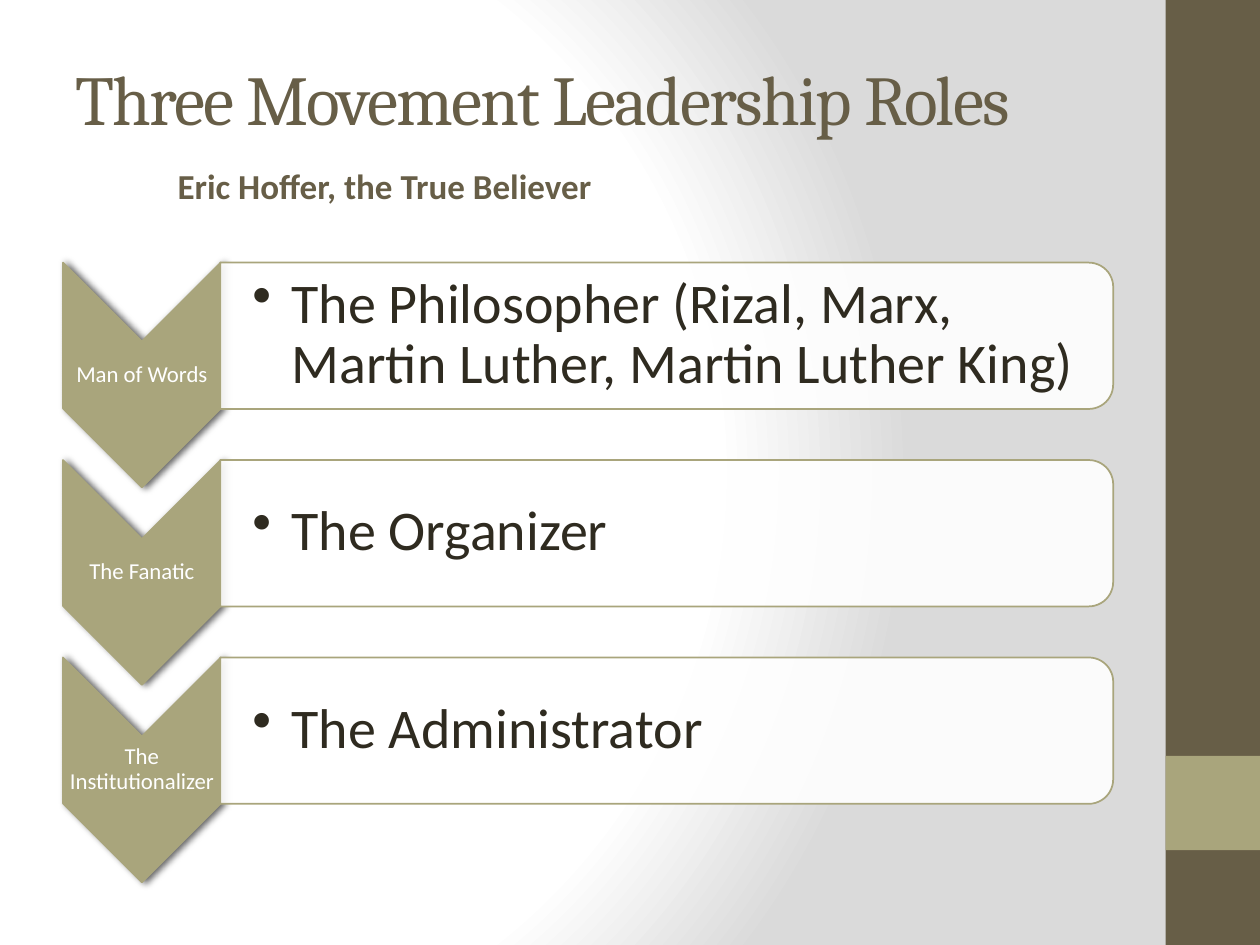
from lxml import etree
from pptx import Presentation
from pptx.dml.color import RGBColor
from pptx.enum.shapes import MSO_SHAPE
from pptx.enum.text import MSO_ANCHOR, PP_ALIGN
from pptx.oxml import parse_xml
from pptx.oxml.ns import nsdecls, qn
from pptx.util import Cm, Pt

COLORS = {
    "brown": "675E47",
    "olive": "A9A57C",
    "ink": "2F2B20",
    "white": "FFFFFF",
    "grey": "DADADA",
}
ROLES = [
    ("Man of Words", "The Philosopher (Rizal, Marx, Martin Luther, Martin Luther King)"),
    ("The Fanatic", "The Organizer"),
    ("The Institutionalizer", "The Administrator"),
]
ROW_PITCH = 3.98


def add_filled(preset, center_x, center_y, width, height, color, rotation=0):
    """Add a plain filled shape, placed by its centre in centimetres."""
    shape = slide.shapes.add_shape(
        preset, Cm(center_x - width / 2), Cm(center_y - height / 2), Cm(width), Cm(height)
    )
    shape.rotation = rotation
    shape.shadow.inherit = False
    shape.fill.solid()
    shape.fill.fore_color.rgb = RGBColor.from_string(COLORS[color])
    shape.line.fill.background()
    return shape


def add_text(text, left, top, width, height, font, size, color, anchor, insets=(0.25, 0.13)):
    """Add a one-paragraph box; insets are the left one and that of the other sides."""
    box = slide.shapes.add_textbox(Cm(left), Cm(top), Cm(width), Cm(height))
    frame = box.text_frame
    frame.word_wrap = True
    frame.vertical_anchor = anchor
    frame.margin_left = Cm(insets[0])
    frame.margin_top = frame.margin_right = frame.margin_bottom = Cm(insets[1])
    paragraph = frame.paragraphs[0]
    run = paragraph.add_run()
    run.text = text
    run.font.name = font
    run.font.size = Pt(size)
    run.font.color.rgb = RGBColor.from_string(COLORS[color])
    return paragraph


deck = Presentation()
deck.slide_width, deck.slide_height = Cm(25.4), Cm(19.05)
slide = deck.slides.add_slide(deck.slide_layouts[6])

# Background: white glow from the left, fading to grey
slide.background.fill.solid()
background = slide.element.find(".//" + qn("p:bgPr"))
stops = "".join(
    f'<a:gs pos="{position}"><a:srgbClr val="{COLORS[color]}"/></a:gs>'
    for position, color in ((0, "white"), (75000, "white"), (100000, "grey"))
)
background.replace(background[0], parse_xml(
    f'<a:gradFill {nsdecls("a")} rotWithShape="1"><a:gsLst>{stops}</a:gsLst>'
    '<a:path path="circle"><a:fillToRect l="20000" t="50000" r="100000" b="50000"/></a:path>'
    "</a:gradFill>"
))

# Side band
add_filled(MSO_SHAPE.RECTANGLE, 24.45, 9.525, 1.9, 19.05, "brown")
add_filled(MSO_SHAPE.RECTANGLE, 24.45, 16.19, 1.9, 1.9, "olive")

# Heading
title = add_text("Three Movement Leadership Roles", 1.27, 0.76, 21.16, 2.41,
                 "Cambria", 40, "brown", MSO_ANCHOR.MIDDLE)
title.runs[0].font._element.set("spc", "-100")
subtitle = add_text("Eric Hoffer, the True Believer", 1.27, 3.18, 21.16, 1.07,
                    "Calibri", 20, "brown", MSO_ANCHOR.TOP)
subtitle.runs[0].font.bold = True
subtitle._p.get_or_add_pPr().set("marL", str(Cm(2.06)))

# One chevron and one bar for each role
for row, (role, description) in enumerate(ROLES):
    offset = row * ROW_PITCH

    chevron = add_filled(MSO_SHAPE.CHEVRON, 2.86, 7.56 + offset, 4.53, 3.18, "olive", 90)
    chevron.line.color.rgb = RGBColor.from_string(COLORS["olive"])
    chevron.line.width = Pt(1)
    effects = chevron._element.spPr.find(qn("a:effectLst"))
    effects.append(parse_xml(
        f'<a:outerShdw {nsdecls("a")} blurRad="{Pt(4)}" dist="{Pt(2)}" dir="0" rotWithShape="0">'
        '<a:srgbClr val="000000"><a:alpha val="60000"/></a:srgbClr></a:outerShdw>'
    ))
    label = add_text(role, 1.27, 6.88 + offset, 3.18, 1.35,
                     "Calibri", 13, "white", MSO_ANCHOR.MIDDLE, (0.03, 0.03))
    label.alignment = PP_ALIGN.CENTER
    label.line_spacing = 0.9

    bar = add_filled(MSO_SHAPE.ROUND_2_SAME_RECTANGLE, 13.44, 6.77 + offset, 2.95, 18, "white", 90)
    bar.line.color.rgb = RGBColor.from_string(COLORS["olive"])
    bar.line.width = Pt(1)
    bar_color = bar._element.spPr.find(qn("a:solidFill"))[0]
    etree.SubElement(bar_color, qn("a:alpha")).set("val", "90000")
    detail = add_text(description, 4.45, 5.44 + offset, 17.86, 2.64,
                      "Calibri", 32, "ink", MSO_ANCHOR.MIDDLE, (0.64, 0.05))
    detail.line_spacing = 0.9
    properties = detail._p.get_or_add_pPr()
    properties.set("marL", str(Cm(0.79)))
    properties.set("indent", str(Cm(-0.79)))
    etree.SubElement(properties, qn("a:buChar")).set("char", "•")

deck.save("out.pptx")
